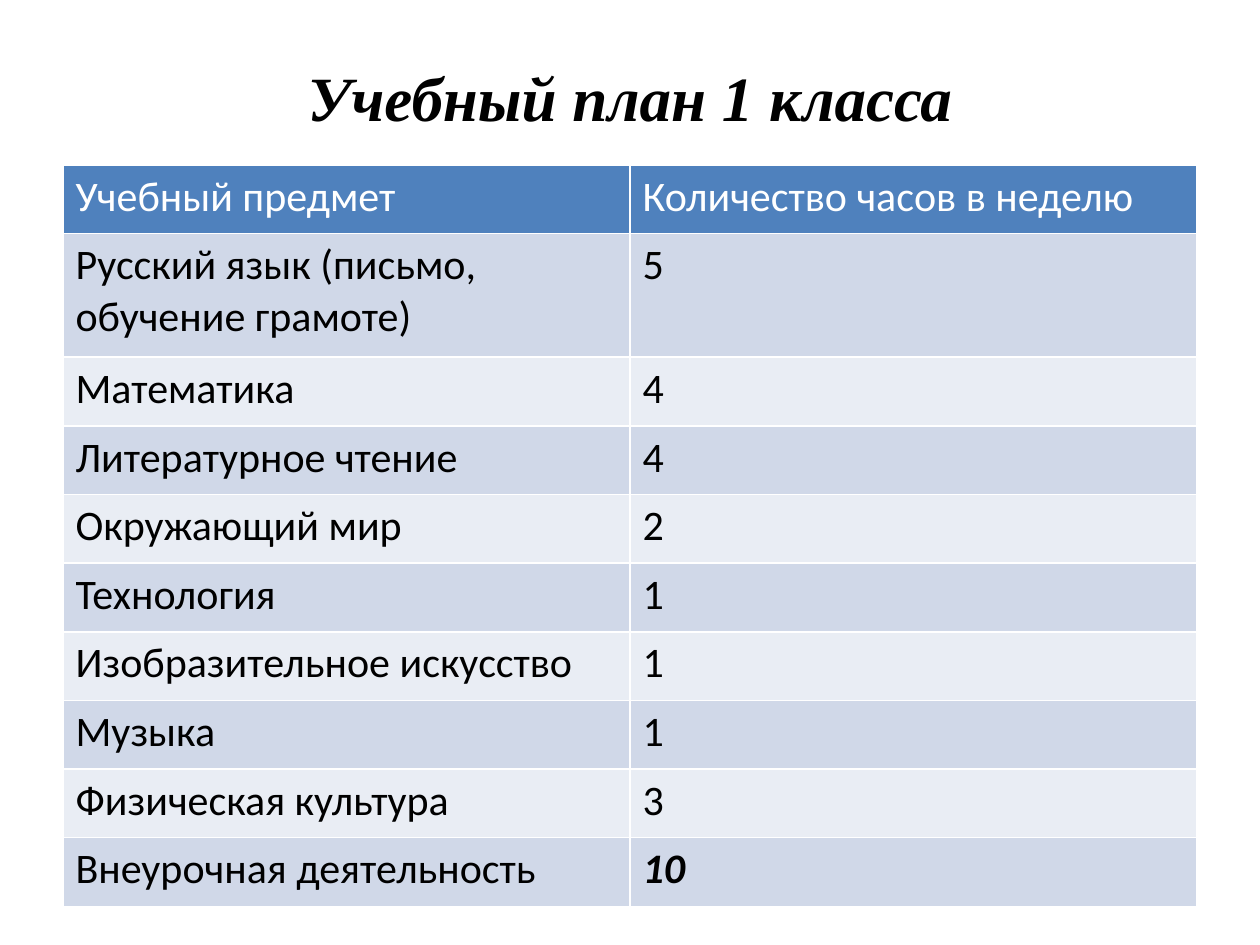
from pptx import Presentation
from pptx.dml.color import RGBColor
from pptx.enum.text import MSO_ANCHOR, PP_ALIGN
from pptx.util import Inches, Pt

TITLE = "Учебный план 1 класса"
HEADER = ("Учебный предмет", "Количество часов в неделю")
SUBJECTS = [
    ("Русский язык (письмо, обучение грамоте)", "5"),
    ("Математика", "4"),
    ("Литературное чтение", "4"),
    ("Окружающий мир", "2"),
    ("Технология", "1"),
    ("Изобразительное искусство", "1"),
    ("Музыка", "1"),
    ("Физическая культура", "3"),
    ("Внеурочная деятельность", "10"),
]
HEADER_FILL = "4F81BD"
BAND_FILLS = ("E9EDF4", "D0D8E8")
LEFT, WIDTH = 0.5, 9
ROW_HEIGHT, TALL_ROW_HEIGHT, TALL_ROW = 0.545, 0.98, 1


def style_span(span, font, size, color, emphasis=False):
    span.font.name = font
    span.font.size = Pt(size)
    span.font.color.rgb = RGBColor.from_string(color)
    span.font.bold = span.font.italic = emphasis


def add_title(page):
    box = page.shapes.add_textbox(Inches(LEFT), Inches(0.3), Inches(WIDTH), Inches(0.93))
    frame = box.text_frame
    frame.word_wrap = True
    frame.vertical_anchor = MSO_ANCHOR.MIDDLE
    frame.text = TITLE
    para = frame.paragraphs[0]
    para.alignment = PP_ALIGN.CENTER
    style_span(para.runs[0], "Times New Roman", 36, "000000", True)


def add_plan(page):
    rows = [HEADER, *SUBJECTS]
    heights = [TALL_ROW_HEIGHT if i == TALL_ROW else ROW_HEIGHT for i in range(len(rows))]
    table = page.shapes.add_table(
        len(rows), len(HEADER), Inches(LEFT), Inches(1.31), Inches(WIDTH), Inches(sum(heights))
    ).table
    for column in table.columns:
        column.width = Inches(WIDTH / len(HEADER))
    for i, (texts, height) in enumerate(zip(rows, heights)):
        table.rows[i].height = Inches(height)
        for j, text in enumerate(texts):
            cell = table.cell(i, j)
            cell.text_frame.text = text
            cell.fill.solid()
            fill = BAND_FILLS[i % 2] if i else HEADER_FILL
            cell.fill.fore_color.rgb = RGBColor.from_string(fill)
            is_total = i == len(rows) - 1 and j == 1
            span = cell.text_frame.paragraphs[0].runs[0]
            style_span(span, "Calibri", 24, "000000" if i else "FFFFFF", is_total)


def main():
    """Build the first-grade curriculum slide."""
    deck = Presentation()
    deck.slide_width, deck.slide_height = Inches(10), Inches(7.5)
    page = deck.slides.add_slide(deck.slide_layouts[6])
    add_title(page)
    add_plan(page)
    deck.save("out.pptx")


if __name__ == "__main__":
    main()
